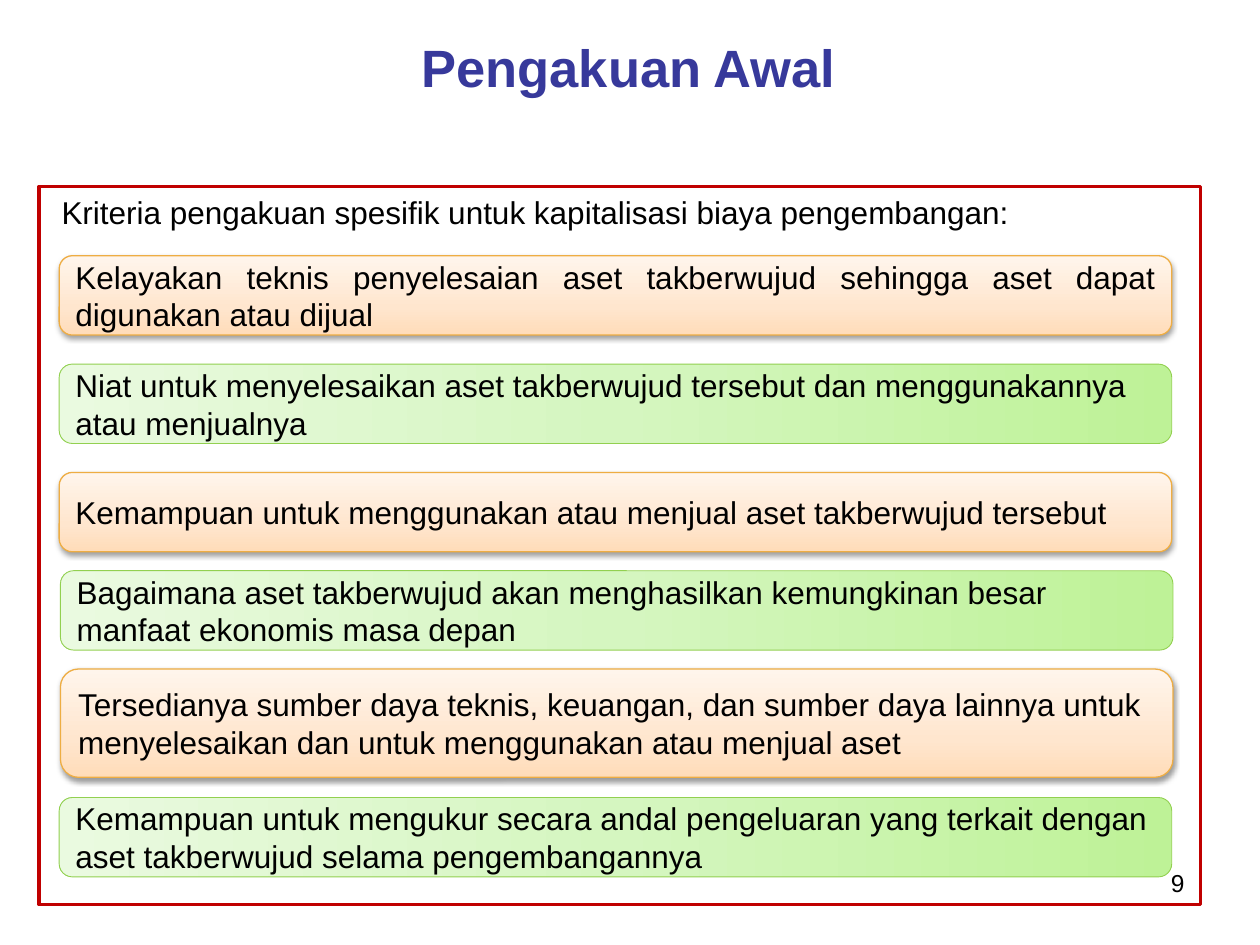
from copy import deepcopy
from dataclasses import dataclass

from lxml.etree import SubElement
from pptx import Presentation
from pptx.dml.color import RGBColor
from pptx.enum.shapes import MSO_SHAPE
from pptx.enum.text import MSO_ANCHOR, PP_ALIGN
from pptx.oxml.ns import qn
from pptx.util import Inches, Pt


@dataclass(frozen=True)
class Theme:
    font: str = "Arial"
    title_size: int = 30
    body_size: int = 18
    number_size: int = 14
    title: str = "37399B"
    text: str = "000000"
    frame: str = "C00000"
    orange_line: str = "EEAD43"
    orange_stops: tuple = ((0, "FFDCB9"), (0.35, "FFE6CE"), (1, "FFF5EC"))
    green_line: str = "92D050"
    green_stops: tuple = ((0, "BEF297"), (0.5, "D5F6C0"), (1, "EAFAE0"))


class CriteriaSlide:
    """Draws styled elements on one slide."""

    def __init__(self, slide, theme):
        self.shapes = slide.shapes
        self.theme = theme

    def add_wording(self, shape, text, size, color, align=PP_ALIGN.LEFT,
                    anchor=MSO_ANCHOR.MIDDLE, bold=False):
        frame = shape.text_frame
        frame.word_wrap = True
        frame.vertical_anchor = anchor
        paragraph = frame.paragraphs[0]
        paragraph.alignment = align
        run = paragraph.add_run()
        run.text = text
        style = {"name": self.theme.font, "size": Pt(size), "bold": bold}
        for attribute, value in style.items():
            setattr(run.font, attribute, value)
        run.font.color.rgb = RGBColor.from_string(color)

    def label(self, box, text, size, color, **style):
        label = self.shapes.add_textbox(*map(Inches, box))
        self.add_wording(label, text, size, color, **style)

    def outlined(self, kind, box, color, width):
        outlined = self.shapes.add_shape(kind, *map(Inches, box))
        outlined.shadow.inherit = False
        outlined.line.color.rgb = RGBColor.from_string(color)
        outlined.line.width = Pt(width)
        return outlined

    def frame(self, box):
        border = self.outlined(MSO_SHAPE.RECTANGLE, box, self.theme.frame, 2)
        border.fill.background()

    def gradient(self, shape, stops, angle):
        shape.fill.gradient()
        shape.fill.gradient_angle = angle
        stop_list = shape._element.spPr.find(qn("a:gradFill")).find(qn("a:gsLst"))
        stop_list.append(deepcopy(stop_list[0]))
        for stop, (position, color) in zip(shape.fill.gradient_stops, stops):
            stop.position = position
            stop.color.rgb = RGBColor.from_string(color)

    def drop_shadow(self, shape):
        effects = shape._element.spPr.find(qn("a:effectLst"))
        shadow = SubElement(effects, qn("a:outerShdw"), blurRad=str(Pt(3.1)),
                            dist=str(Pt(1.6)), dir="5400000", rotWithShape="0")
        color = SubElement(shadow, qn("a:srgbClr"), val=self.theme.text)
        SubElement(color, qn("a:alpha"), val="38000")

    def criterion(self, box, text, raised, align):
        theme = self.theme
        line, width, stops, angle = (
            (theme.orange_line, 0.75, theme.orange_stops, 90) if raised
            else (theme.green_line, 0.5, theme.green_stops, 180))
        card = self.outlined(MSO_SHAPE.ROUNDED_RECTANGLE, box, line, width)
        self.gradient(card, stops, angle)
        if raised:
            self.drop_shadow(card)
        self.add_wording(card, text, theme.body_size, theme.text, align)


CRITERIA = [
    (0.47, 2.03, 0.63, PP_ALIGN.JUSTIFY,
     "Kelayakan teknis penyelesaian aset takberwujud sehingga aset dapat "
     "digunakan atau dijual"),
    (0.47, 2.89, 0.63, PP_ALIGN.LEFT,
     "Niat untuk menyelesaikan aset takberwujud tersebut dan menggunakannya "
     "atau menjualnya"),
    (0.47, 3.75, 0.63, PP_ALIGN.JUSTIFY,
     "Kemampuan untuk menggunakan atau menjual aset takberwujud tersebut"),
    (0.48, 4.53, 0.63, PP_ALIGN.LEFT,
     "Bagaimana aset takberwujud akan menghasilkan kemungkinan besar "
     "manfaat ekonomis masa depan"),
    (0.48, 5.31, 0.86, PP_ALIGN.LEFT,
     "Tersedianya sumber daya teknis, keuangan, dan sumber daya lainnya untuk "
     "menyelesaikan dan untuk menggunakan atau menjual aset"),
    (0.47, 6.33, 0.63, PP_ALIGN.LEFT,
     "Kemampuan untuk mengukur secara andal pengeluaran yang terkait dengan "
     "aset takberwujud selama pengembangannya"),
]


def main():
    theme = Theme()
    deck = Presentation()
    deck.slide_width, deck.slide_height = Inches(10), Inches(7.5)
    page = CriteriaSlide(deck.slides.add_slide(deck.slide_layouts[6]), theme)

    page.label((0.49, 0.22, 9, 0.62), "Pengakuan Awal", theme.title_size,
               theme.title, align=PP_ALIGN.CENTER, bold=True)
    page.label((7.17, 6.84, 2.33, 0.35), "9", theme.number_size, theme.text,
               align=PP_ALIGN.RIGHT, anchor=MSO_ANCHOR.TOP)
    page.label((0.39, 1.48, 8.2, 0.4),
               "Kriteria pengakuan spesifik untuk kapitalisasi biaya pengembangan:",
               theme.body_size, theme.text, anchor=MSO_ANCHOR.TOP)
    for index, (left, top, height, align, text) in enumerate(CRITERIA):
        page.criterion((left, top, 8.83, height), text, index % 2 == 0, align)
    page.frame((0.31, 1.48, 9.22, 5.7))

    deck.save("out.pptx")


if __name__ == "__main__":
    main()
